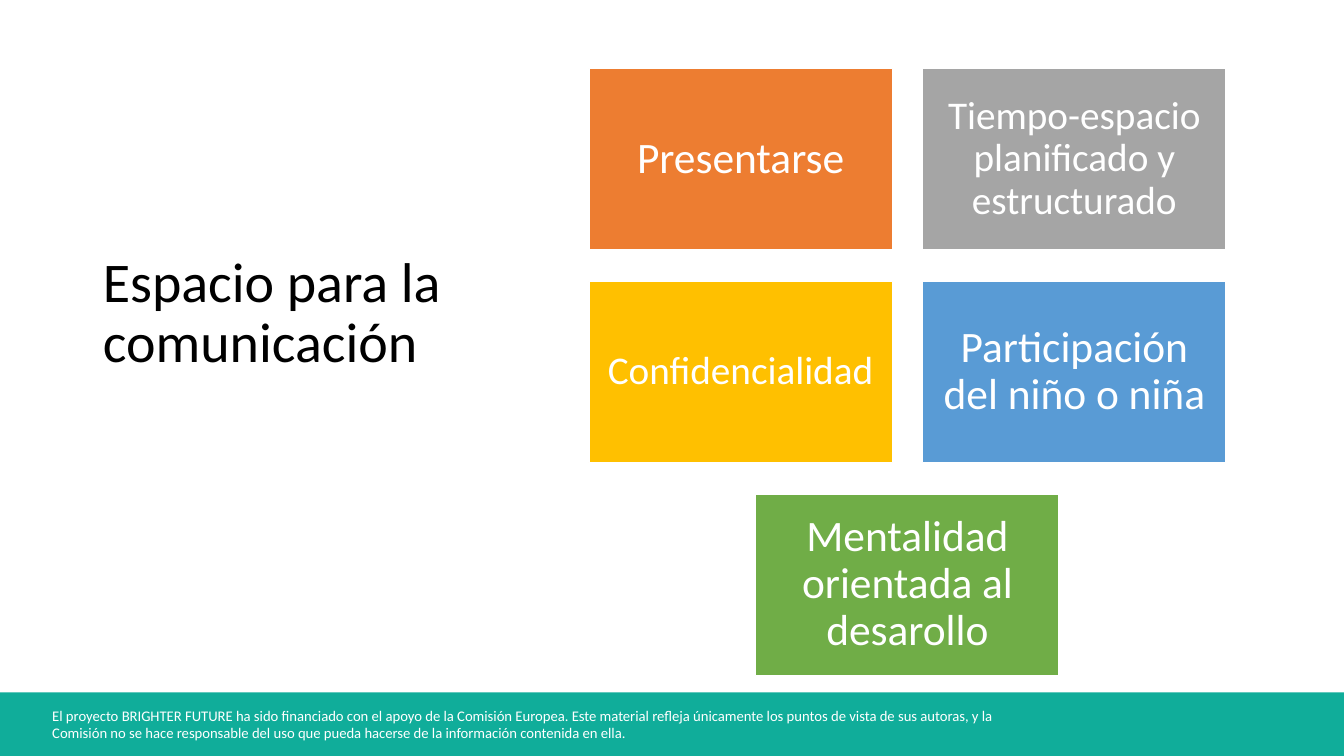
from dataclasses import dataclass

from pptx import Presentation
from pptx.dml.color import RGBColor
from pptx.enum.shapes import MSO_SHAPE
from pptx.enum.text import MSO_ANCHOR, PP_ALIGN
from pptx.shapes.autoshape import Shape
from pptx.slide import Slide
from pptx.util import Emu, Pt

EMU_PER_PX = 9144  # 100 px to the inch
SLIDE_WIDTH, SLIDE_HEIGHT = 1333, 750
FONT = "Calibri"
WHITE, BLACK, TEAL = "FFFFFF", "000000", "10AD9A"

TILE_WIDTH, TILE_HEIGHT = 301, 180
TILE_LEFT, TILE_TOP = 584, 68
COLUMN_STEP, ROW_STEP = 331, 211
TILE_INSET = 13

FOOTER_TOP = 687
FOOTER_TEXT = (
    "El proyecto BRIGHTER FUTURE ha sido financiado con el apoyo de la Comisión Europea. "
    "Este material refleja únicamente los puntos de vista de sus autoras, y la Comisión "
    "no se hace responsable del uso que pueda hacerse de la información contenida en ella."
)


@dataclass(frozen=True)
class Tile:
    text: str
    column: float
    row: int
    color: str
    size: float = 31


TILES = [
    Tile("Presentarse", 0, 0, "ED7D31"),
    Tile("Tiempo-espacio planificado y estructurado", 1, 0, "A5A5A5", 28),
    Tile("Confidencialidad", 0, 1, "FFC000", 28),
    Tile("Participación del niño o niña", 1, 1, "599BD5"),
    Tile("Mentalidad orientada al desarollo", 0.5, 2, "70AD47"),
]


def px(length: float) -> Emu:
    return Emu(round(length * EMU_PER_PX))


def rgb(color: str) -> RGBColor:
    return RGBColor.from_string(color)


def write_text(shape: Shape, text: str, size: float, color: str,
               align: PP_ALIGN = PP_ALIGN.LEFT, line_spacing: float = 1.0) -> None:
    shape.text_frame.word_wrap = True
    shape.text_frame.text = text
    paragraph = shape.text_frame.paragraphs[0]
    paragraph.alignment = align
    paragraph.line_spacing = line_spacing
    paragraph.font.name = FONT
    paragraph.font.size = Pt(size)
    paragraph.font.color.rgb = rgb(color)


def add_rectangle(slide: Slide, left: float, top: float, width: float,
                  height: float, color: str) -> Shape:
    shape = slide.shapes.add_shape(
        MSO_SHAPE.RECTANGLE, px(left), px(top), px(width), px(height))
    shape.shadow.inherit = False
    shape.fill.solid()
    shape.fill.fore_color.rgb = rgb(color)
    shape.line.fill.background()
    return shape


def add_tile(slide: Slide, tile: Tile) -> None:
    shape = add_rectangle(
        slide, TILE_LEFT + tile.column * COLUMN_STEP, TILE_TOP + tile.row * ROW_STEP,
        TILE_WIDTH, TILE_HEIGHT, tile.color)
    shape.line.color.rgb = rgb(WHITE)
    shape.line.width = Pt(1)
    frame = shape.text_frame
    frame.margin_left = frame.margin_right = px(TILE_INSET)
    frame.margin_top = frame.margin_bottom = px(TILE_INSET)
    frame.vertical_anchor = MSO_ANCHOR.MIDDLE
    write_text(shape, tile.text, tile.size, WHITE, PP_ALIGN.CENTER, 0.9)


def add_footer(slide: Slide) -> None:
    add_rectangle(slide, 0, FOOTER_TOP, SLIDE_WIDTH, SLIDE_HEIGHT - FOOTER_TOP, TEAL)
    notice = slide.shapes.add_textbox(px(42), px(696), px(1000), px(45))
    write_text(notice, FOOTER_TEXT, 10.5, WHITE)


def set_title(slide: Slide, text: str) -> None:
    title = slide.shapes.title
    title.left, title.top = px(92), px(61)
    title.width, title.height = px(393), px(502)
    title.text_frame.vertical_anchor = MSO_ANCHOR.MIDDLE
    write_text(title, text, 40, BLACK, line_spacing=0.9)


def main() -> None:
    presentation = Presentation()
    presentation.slide_width = px(SLIDE_WIDTH)
    presentation.slide_height = px(SLIDE_HEIGHT)
    slide = presentation.slides.add_slide(presentation.slide_layouts.get_by_name("Title Only"))
    add_footer(slide)
    set_title(slide, "Espacio para la comunicación")
    for tile in TILES:
        add_tile(slide, tile)
    presentation.save("out.pptx")


if __name__ == "__main__":
    main()
